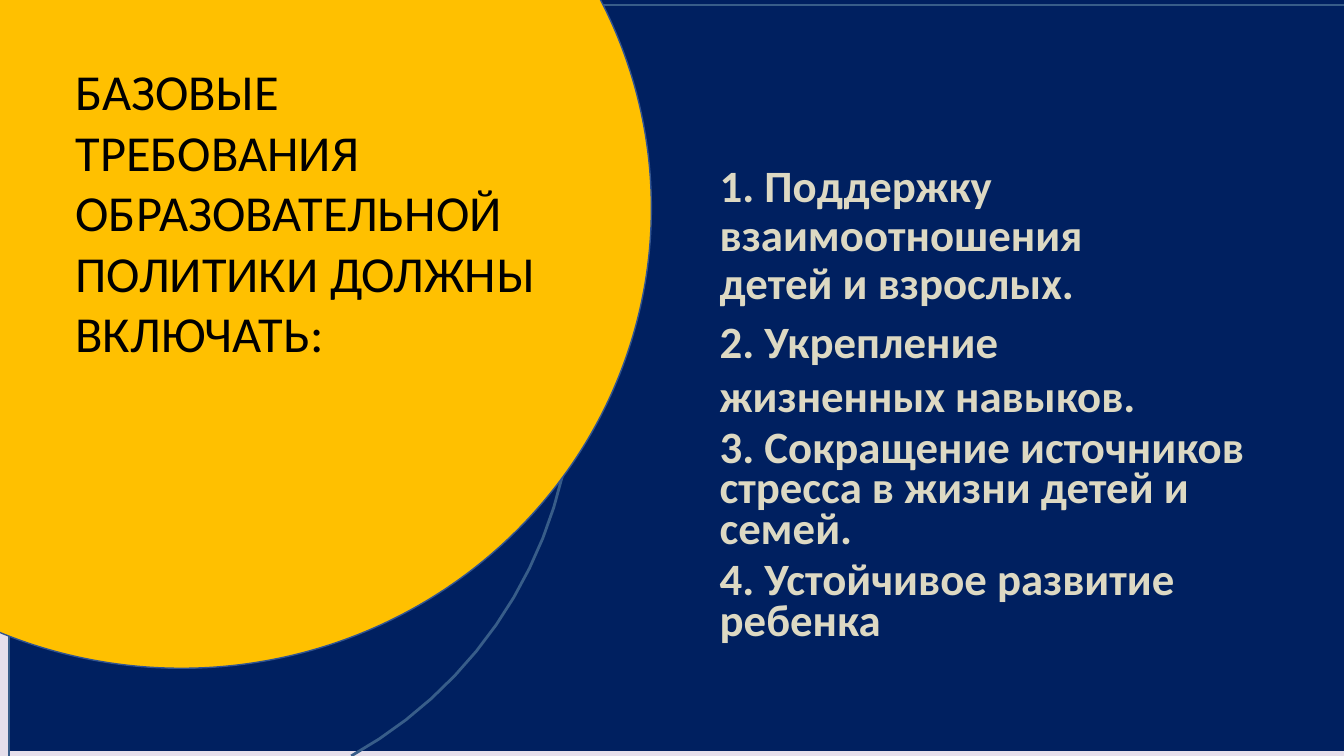
from dataclasses import dataclass
from math import asin, cos, sin

from lxml.etree import SubElement
from pptx import Presentation
from pptx.dml.color import RGBColor
from pptx.enum.shapes import MSO_SHAPE
from pptx.enum.text import MSO_ANCHOR, MSO_AUTO_SIZE, PP_ALIGN
from pptx.oxml.ns import qn
from pptx.util import Inches, Pt

W, H = 13.33, 7.5
COLORS = {"lavender": "E6DFEB", "navy": "002060", "frame": "385D89", "yellow": "FFC000",
          "rim": "325491", "black": "000000", "sand": "DDD9C3"}


@dataclass
class Outline:
    points: list[tuple[float, float]]
    fill: str = ""
    line: str = ""


@dataclass
class Item:
    text: str
    spacing: float | Pt
    before: float = 0
    right: float = 0


def rgb(name: str) -> RGBColor:
    return RGBColor.from_string(COLORS[name])


def box(left: float, top: float, right: float, bottom: float) -> list[tuple[float, float]]:
    return [(left, top), (right, top), (right, bottom), (left, bottom)]


def arc(cx: float, cy: float, radius: float, steps: int) -> list[tuple[float, float]]:
    end = asin(cy / radius)
    angles = [end * (2 * i / steps - 1) for i in range(steps + 1)]
    return [(cx + radius * cos(a), cy + radius * sin(a)) for a in angles]


def paint(sp, fill: str, line: str, width: float) -> None:
    sp.shadow.inherit = False
    if fill:
        sp.fill.solid()
        sp.fill.fore_color.rgb = rgb(fill)
    else:
        sp.fill.background()
    if line:
        sp.line.color.rgb = rgb(line)
        sp.line.width = Pt(width)
    else:
        sp.line.fill.background()


def draw_outline(s, outline: Outline) -> None:
    pts = [(Inches(x), Inches(y)) for x, y in outline.points]
    builder = s.shapes.build_freeform(*pts[0], scale=1.0)
    builder.add_line_segments(pts[1:], close=bool(outline.fill))
    paint(builder.convert_to_shape(), outline.fill, outline.line, 2)


def format_text(p, size: float, color: str, bold: bool) -> None:
    p.alignment = PP_ALIGN.LEFT
    for name, value in {"name": "Calibri", "size": Pt(size), "bold": bold}.items():
        for r in p.runs:
            setattr(r.font, name, value)
    for r in p.runs:
        r.font.color.rgb = rgb(color)


def set_frame(tf) -> None:
    values = {"word_wrap": True, "vertical_anchor": MSO_ANCHOR.TOP,
              "auto_size": MSO_AUTO_SIZE.SHAPE_TO_FIT_TEXT}
    for name, value in values.items():
        setattr(tf, name, value)


def place_title(s, text: str) -> None:
    sp = s.shapes.title
    for name, value in {"left": 0.65, "top": 0.55, "width": 5.21, "height": 3.74}.items():
        setattr(sp, name, Inches(value))
    set_frame(sp.text_frame)
    sp.text_frame.text = text
    for p in sp.text_frame.paragraphs:
        format_text(p, 36, "black", False)
    s.shapes[-1].element.addnext(sp.element)


def draw_items(s, items: list[Item]) -> None:
    tf = s.shapes.add_textbox(Inches(7.03), Inches(1.58), Inches(5.82), Inches(5.21)).text_frame
    set_frame(tf)
    for i, item in enumerate(items):
        p = tf.paragraphs[0] if i == 0 else tf.add_paragraph()
        p.add_run().text = item.text
        format_text(p, 32, "sand", True)
        p.line_spacing = item.spacing
        p.space_before = Pt(item.before)
        pPr = p._p.get_or_add_pPr()
        for name, value in {"marL": 0.01, "marR": item.right, "indent": 0}.items():
            pPr.set(name, str(Inches(value)))
        SubElement(pPr, qn("a:buNone"))


OUTLINES = [
    Outline(box(0, 0, W, H), fill="lavender"),
    Outline(box(0.09, 0, W, 7.45), fill="navy"),
    Outline([(W, 0.05), (0.09, 0.05), (0.09, H)], line="frame"),
    Outline(arc(1.4, 3.75, 4.29, 28), line="frame"),
]
ITEMS = [
    Item("1. Поддержку взаимоотношения детей и взрослых.", 0.9, right=1.2),
    Item("2. Укрепление жизненных навыков.", 1.0, 3.2, 1.2),
    Item("3. Сокращение источников стресса в жизни детей и семей.", Pt(29.2), 6.9),
    Item("4. Устойчивое развитие ребенка", Pt(29.2), 6.9),
]


def main() -> None:
    prs = Presentation()
    prs.slide_width, prs.slide_height = Inches(W), Inches(H)
    s = prs.slides.add_slide(prs.slide_layouts[5])
    for outline in OUTLINES:
        draw_outline(s, outline)
    disc = s.shapes.add_shape(MSO_SHAPE.OVAL, Inches(-2.86), Inches(-2.5), Inches(9.32), Inches(9.13))
    paint(disc, "yellow", "rim", 1)
    place_title(s, "БАЗОВЫЕ\nТРЕБОВАНИЯ ОБРАЗОВАТЕЛЬНОЙ ПОЛИТИКИ ДОЛЖНЫ ВКЛЮЧАТЬ:")
    draw_items(s, ITEMS)
    prs.save("out.pptx")


if __name__ == "__main__":
    main()
